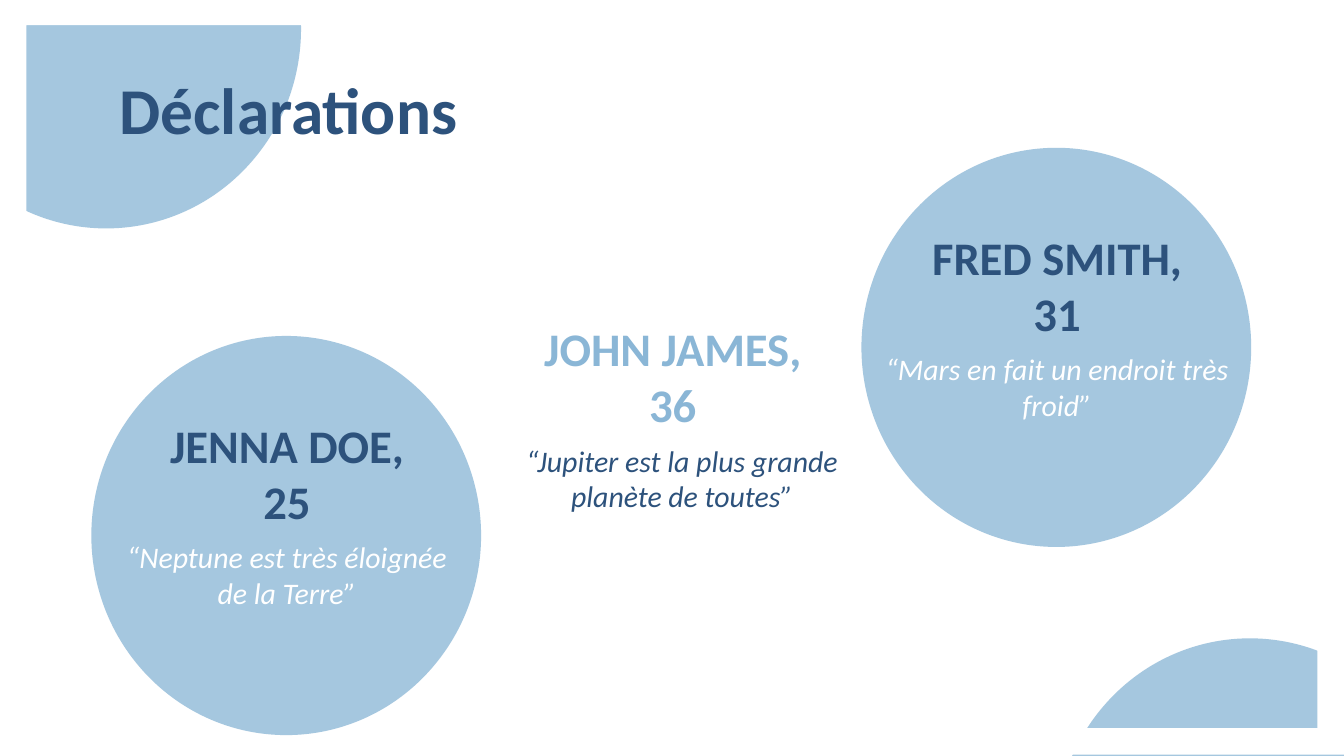
"""Build the "Déclarations" slide: three quotes set on a pattern of circles."""
from lxml import etree
from pptx import Presentation
from pptx.dml.color import RGBColor
from pptx.enum.shapes import MSO_SHAPE
from pptx.enum.text import MSO_ANCHOR, PP_ALIGN
from pptx.oxml.ns import qn
from pptx.util import Inches, Pt

OVAL, FRAME = MSO_SHAPE.OVAL, MSO_SHAPE.FRAME
TOP, MIDDLE = MSO_ANCHOR.TOP, MSO_ANCHOR.MIDDLE
LEFT, CENTER = PP_ALIGN.LEFT, PP_ALIGN.CENTER

NAVY = RGBColor(0x2D, 0x52, 0x7C)
BLUE = RGBColor(0x8A, 0xB6, 0xD6)
WHITE = RGBColor(0xFF, 0xFF, 0xFF)
FONT = "Calibri"

HEADING = "Déclarations"
STATEMENTS = [
    {"name": "JENNA DOE, 25", "quote": "“Neptune est très éloignée de la Terre”",
     "origin": (0.68, 2.5), "circled": True, "quote_width": 2.83},
    {"name": "JOHN JAMES, 36", "quote": "“Jupiter est la plus grande planète de toutes”",
     "origin": (3.55, 1.78), "circled": False, "quote_width": 2.97},
    {"name": "FRED SMITH, 31", "quote": "“Mars en fait un endroit très froid”",
     "origin": (6.41, 1.1), "circled": True, "quote_width": 2.83},
]
CORNER_CIRCLES = [(7.85, 4.75), (-0.66, -1.27)]

SLIDE_WIDTH = 10
SLIDE_HEIGHT = SLIDE_WIDTH * 9 / 16
CIRCLE_SIZE = (2.9, 2.97)
NAME_OFFSET, NAME_SIZE = (0.33, 0.5), (2.25, 1.04)
QUOTE_OFFSET, QUOTE_HEIGHT = (0.04, 1.41), 0.85


def add_filled(slide, preset, origin, size, color, opacity=100):
    shape = slide.shapes.add_shape(preset, *map(Inches, origin + size))
    shape.shadow.inherit = False
    shape.line.fill.background()
    shape.fill.solid()
    shape.fill.fore_color.rgb = color
    if opacity < 100:
        tint = shape.element.spPr.find(".//" + qn("a:srgbClr"))
        etree.SubElement(tint, qn("a:alpha"), val=str(opacity * 1000))
    return shape


def write(box, text, size, color, align, anchor=TOP, bold=False, italic=False):
    frame = box.text_frame
    frame.word_wrap = True
    frame.vertical_anchor = anchor
    frame.margin_left = frame.margin_right = Inches(0.1)
    frame.margin_top = frame.margin_bottom = Inches(0.1)
    paragraph = frame.paragraphs[0]
    paragraph.alignment = align
    paragraph.line_spacing = 1.0
    run = paragraph.add_run()
    run.text = text
    font = run.font
    font.name, font.size, font.color.rgb = FONT, Pt(size), color
    font.bold, font.italic = bold, italic


def add_statement(slide, statement):
    x, y = statement["origin"]
    circled = statement["circled"]
    if circled:
        add_filled(slide, OVAL, (x, y), CIRCLE_SIZE, BLUE, 76)
    name_color, quote_color = (NAVY, WHITE) if circled else (BLUE, NAVY)

    def text_box(offset, size):
        origin = (x + offset[0], y + offset[1])
        return slide.shapes.add_textbox(*map(Inches, origin + size))

    write(text_box(NAME_OFFSET, NAME_SIZE), statement["name"], 25, name_color,
          CENTER, bold=True)
    write(text_box(QUOTE_OFFSET, (statement["quote_width"], QUOTE_HEIGHT)),
          statement["quote"], 16, quote_color, CENTER, italic=True)


def main():
    deck = Presentation()
    deck.slide_width, deck.slide_height = Inches(SLIDE_WIDTH), Inches(SLIDE_HEIGHT)
    slide = deck.slides.add_slide(deck.slide_layouts[5])

    for origin in CORNER_CIRCLES:
        add_filled(slide, OVAL, origin, CIRCLE_SIZE, BLUE, 76)
    border = add_filled(slide, FRAME, (0, -0.01), (SLIDE_WIDTH, SLIDE_HEIGHT), WHITE)
    border.adjustments[0] = 0.035

    for statement in STATEMENTS:
        add_statement(slide, statement)

    heading = slide.shapes.title
    heading.left, heading.top = Inches(0.79), Inches(0.49)
    heading.width, heading.height = Inches(8.43), Inches(0.63)
    write(heading, HEADING, 35, NAVY, LEFT, MIDDLE, bold=True)
    heading.element.getparent().append(heading.element)

    deck.save("out.pptx")


if __name__ == "__main__":
    main()
